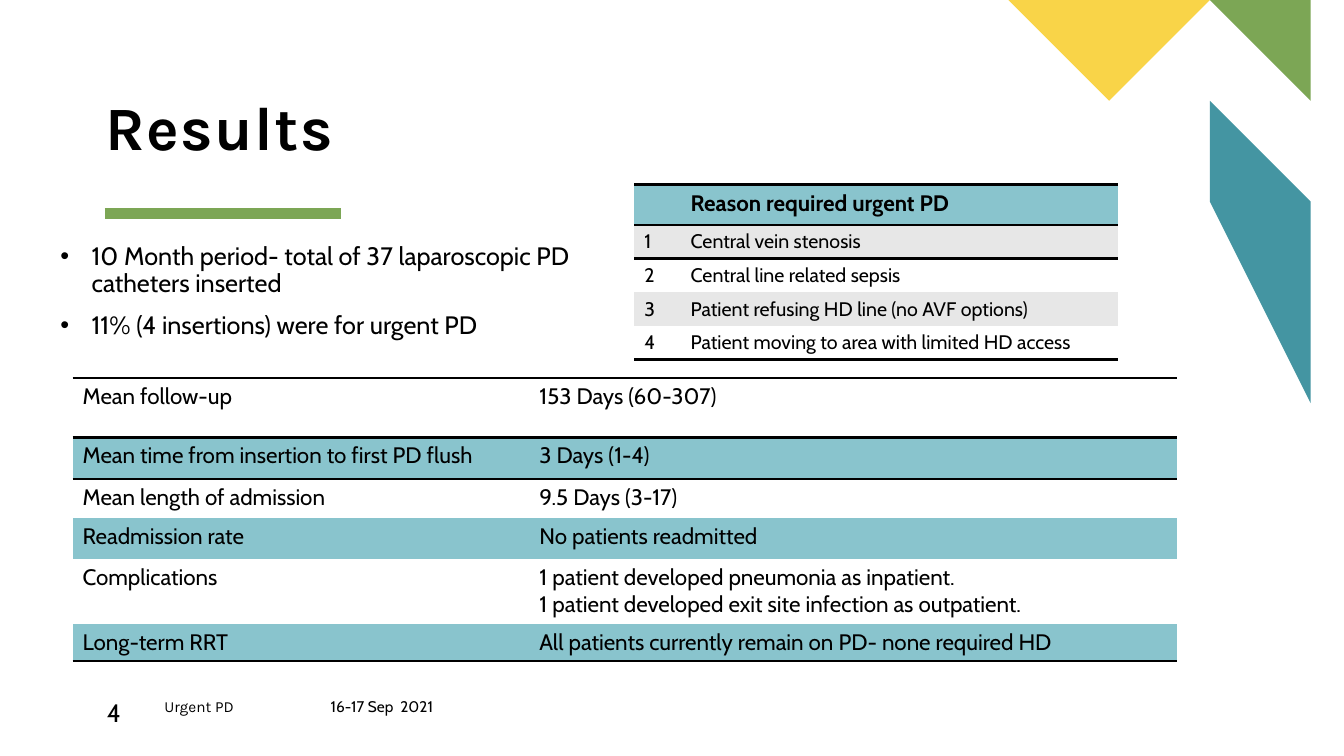
from lxml.etree import SubElement
from pptx import Presentation
from pptx.dml.color import RGBColor
from pptx.enum.shapes import MSO_CONNECTOR
from pptx.enum.text import MSO_ANCHOR
from pptx.oxml.ns import qn
from pptx.util import Inches, Pt

WIDE, HIGH = 13.33, 7.5
HUES = {"ink": "000000", "green": "7CA655", "teal": "4495A2", "gold": "F9D448",
        "aqua": "89C4CD", "grey": "E7E7E7", "white": "FFFFFF"}
NO_STYLE = "{2D5ABB26-0587-4C30-8999-92F81FD0307C}"

TITLE = "Results"
POINTS = ["10 Month period- total of 37 laparoscopic PD catheters inserted",
          "11% (4 insertions) were for urgent PD"]
FOOT = [("4", 1.06, 0.57, "Cabin", 18),
        ("Urgent PD", 1.63, 1.64, "Karla", 11),
        ("16-17 Sep  2021", 3.28, 1.44, "Cabin", 11)]
REASONS = [("", "Reason required urgent PD"),
           ("1", "Central vein stenosis"),
           ("2", "Central line related sepsis"),
           ("3", "Patient refusing HD line (no AVF options)"),
           ("4", "Patient moving to area with limited HD access")]
OUTCOMES = [("Mean follow-up", "153 Days (60-307)"),
            ("Mean time from insertion to first PD flush", "3 Days (1-4)"),
            ("Mean length of admission", "9.5 Days (3-17)"),
            ("Readmission rate", "No patients readmitted"),
            ("Complications", "1 patient developed pneumonia as inpatient.\n"
                              "1 patient developed exit site infection as outpatient."),
            ("Long-term RRT", "All patients currently remain on PD- none required HD")]
DECOR = [("teal", [(WIDE, 3.64), (WIDE, 2.41), (12.12, 1.19), (11.5, 1.8)]),
         ("green", [(WIDE, 1.19), (WIDE, 0), (12.15, 0)]),
         ("gold", [(9.7, 0), (10.89, 1.19), (12.09, 0)])]


def color(name):
    return RGBColor.from_string(HUES[name])


def write(frame, lines, font="Cabin", size=16, bold=False, track=0,
          lead=None, gap=0, bullet=False):
    frame.word_wrap = True
    for i, line in enumerate(lines):
        para = frame.paragraphs[0] if i == 0 else frame.add_paragraph()
        if lead:
            para.line_spacing = lead
        if gap and i:
            para.space_before = Pt(gap)
        if bullet:
            props = para._p.get_or_add_pPr()
            props.set("marL", str(Inches(0.31)))
            props.set("indent", str(-Inches(0.31)))
            SubElement(props, qn("a:buFont"), typeface="Arial")
            SubElement(props, qn("a:buChar"), char="•")
        run = para.add_run()
        run.text = line
        run.font.name, run.font.size, run.font.bold = font, Pt(size), bold
        run.font.color.rgb = color("ink")
        if track:
            run._r.get_or_add_rPr().set("spc", str(track * 100))


def add_box(slide, lines, left, top, wide, high, inset=0, anchor=MSO_ANCHOR.TOP, **style):
    box = slide.shapes.add_textbox(*map(Inches, (left, top, wide, high)))
    frame = box.text_frame
    if inset == 0:
        frame.margin_left = frame.margin_right = 0
        frame.margin_top = frame.margin_bottom = 0
    frame.vertical_anchor = anchor
    write(frame, lines, **style)


def rule(cell, *sides):
    """Draw 2 pt lines on the given cell sides; call before filling the cell."""
    for side in sides:
        line = SubElement(cell._tc.get_or_add_tcPr(), qn("a:ln" + side), w=str(Pt(2)))
        fill = SubElement(line, qn("a:solidFill"))
        SubElement(fill, qn("a:srgbClr"), val=HUES["ink"])


def add_grid(slide, data, left, top, cols, rows, fills, head, size):
    """Add a table ruled around its first row and under its last."""
    area = map(Inches, (left, top, sum(cols), sum(rows)))
    table = slide.shapes.add_table(len(rows), len(cols), *area).table
    table.horz_banding = False
    table.first_row = head
    table._tbl.tblPr.find(qn("a:tableStyleId")).text = NO_STYLE
    for col, wide in zip(table.columns, cols):
        col.width = Inches(wide)
    for i, high in enumerate(rows):
        table.rows[i].height = Inches(high)
        top_row = head and i == 0
        for j, text in enumerate(data[i]):
            cell = table.cell(i, j)
            if i == 0:
                rule(cell, "T", "B")
            elif i == 1:
                rule(cell, "T")
            elif i == len(rows) - 1:
                rule(cell, "B")
            cell.fill.solid()
            cell.fill.fore_color.rgb = color("aqua" if top_row else fills[i % 2])
            write(cell.text_frame, text.split("\n"), size=16 if top_row else size,
                  bold=top_row)


def add_decor(slide):
    bar = slide.shapes.add_connector(MSO_CONNECTOR.STRAIGHT,
                                     *map(Inches, (1.04, 2.12, 3.38, 2.12)))
    bar.line.color.rgb = color("green")
    bar.line.width = Pt(8)
    SubElement(bar._element.spPr, qn("a:effectLst"))
    for hue, dots in DECOR:
        pen = slide.shapes.build_freeform(*dots[0], scale=Inches(1))
        pen.add_line_segments(dots[1:], close=True)
        shape = pen.convert_to_shape()
        shape.shadow.inherit = False
        shape.fill.solid()
        shape.fill.fore_color.rgb = color(hue)
        shape.line.fill.background()


def main():
    deck = Presentation()
    deck.slide_width, deck.slide_height = Inches(WIDE), Inches(HIGH)
    slide = deck.slides.add_slide(deck.slide_layouts[6])
    add_decor(slide)
    add_box(slide, [TITLE], 1.05, 0.96, 5.4, 0.67, anchor=MSO_ANCHOR.BOTTOM,
            font="Karla", size=44, bold=True, track=1, lead=0.9)
    add_box(slide, POINTS, 0.5, 2.37, 5.29, 0.63, inset=0.1,
            size=18, lead=0.9, gap=10, bullet=True)
    for text, left, wide, font, size in FOOT:
        add_box(slide, [text], left, 6.92, wide, 0.27, font=font, size=size)
    add_grid(slide, REASONS, 6.29, 1.83, [0.46, 4.34], [0.37] + [0.33] * 4,
             ["white", "grey"], head=True, size=14)
    add_grid(slide, OUTCOMES, 0.72, 3.75, [4.53, 6.42],
             [0.59, 0.41, 0.39, 0.41, 0.64, 0.37], ["white", "aqua"], head=False, size=16)
    deck.save("out.pptx")


if __name__ == "__main__":
    main()
